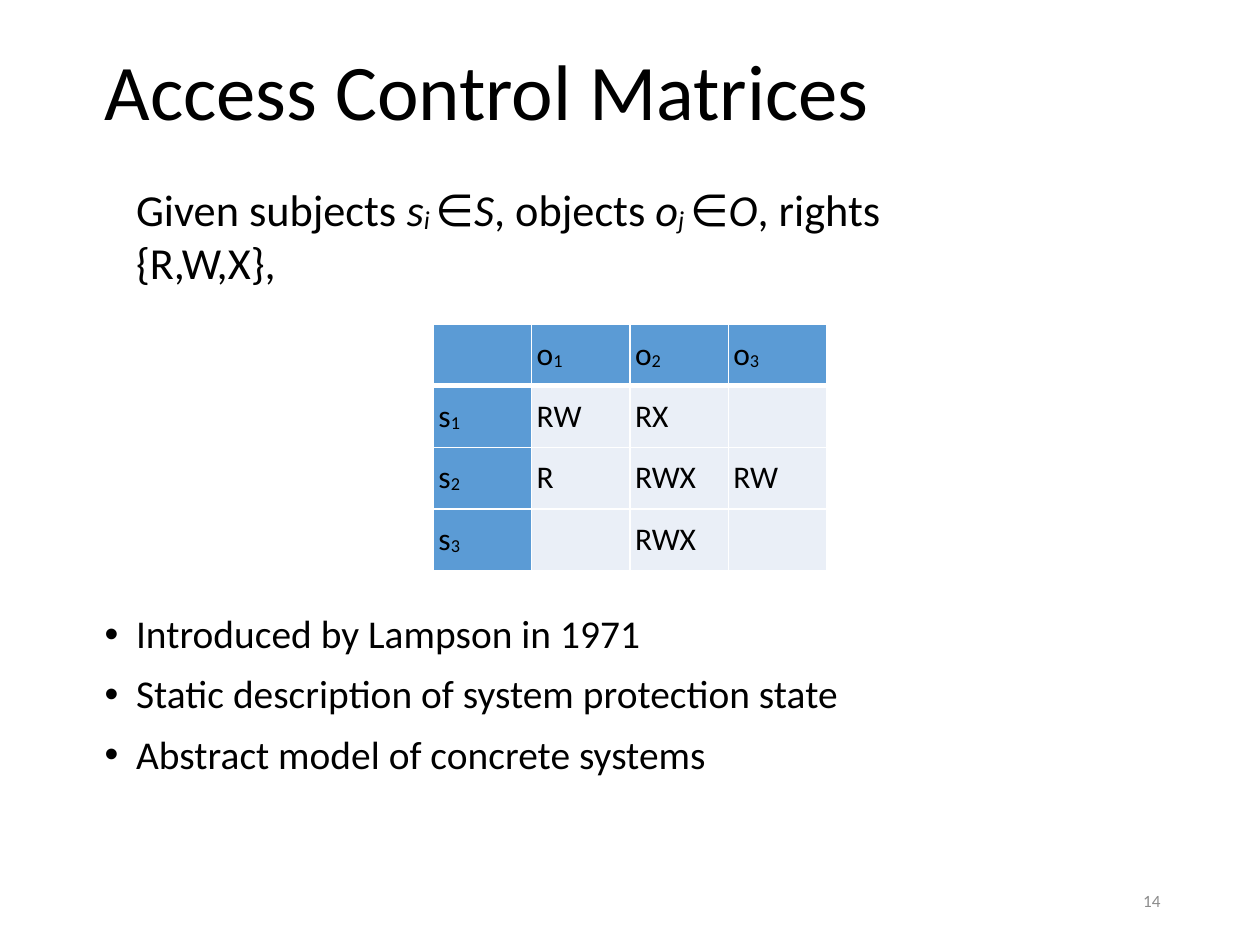
from lxml import etree
from pptx import Presentation
from pptx.dml.color import RGBColor
from pptx.enum.text import MSO_ANCHOR, MSO_AUTO_SIZE, PP_ALIGN
from pptx.oxml.ns import qn
from pptx.util import Inches, Pt

LEFT, RIGHT = PP_ALIGN.LEFT, PP_ALIGN.RIGHT
TOP, MIDDLE = MSO_ANCHOR.TOP, MSO_ANCHOR.MIDDLE
NO_FIT = MSO_AUTO_SIZE.NONE

FONT = "Calibri"
BLACK = RGBColor(0x00, 0x00, 0x00)
GREY = RGBColor(0x8C, 0x8C, 0x8C)
HEADER_BLUE = RGBColor(0x5B, 0x9B, 0xD5)
CELL_BLUE = RGBColor(0xEA, 0xEF, 0xF7)
RULE_COLOR = "FFFFFF"

WIDTH, HEIGHT = 10, 7.5
MARGIN = 0.73
CONTENT_WIDTH = WIDTH - 2 * MARGIN
COLUMN, ROW = 0.78, 0.49
INSET = Inches(0.04)

# Matrix entries; a digit after a letter is an index
MATRIX = [
    ["", "o1", "o2", "o3"],
    ["s1", "RW", "RX", ""],
    ["s2", "R", "RWX", "RW"],
    ["s3", "", "RWX", ""],
]
BULLETS = [
    "Introduced by Lampson in 1971",
    "Static description of system protection state",
    "Abstract model of concrete systems",
]
# Text, italic, subscript
DEFINITION = [
    ("Given subjects ", False, False),
    ("s", True, False),
    ("i ", True, True),
    ("∈", False, False),
    ("S", True, False),
    (", objects ", False, False),
    ("o", True, False),
    ("j ", True, True),
    ("∈O", True, False),
    (", rights {R,W,X},", False, False),
]


def place(shape, left, top, width, height):
    shape.left, shape.top = Inches(left), Inches(top)
    shape.width, shape.height = Inches(width), Inches(height)


def style_font(font, size, color=BLACK):
    font.name, font.size, font.bold = FONT, Pt(size), False
    font.color.rgb = color


def add_span(para, text, size, color=BLACK, italic=False, subscript=False):
    span = para.add_run()
    span.text = text
    style_font(span.font, size, color)
    span.font.italic = italic
    if subscript:
        span.font._element.set("baseline", "-6000")


def set_insets(item):
    item.margin_left = item.margin_right = INSET
    item.margin_top = item.margin_bottom = INSET


def add_text_box(page, left, top, width, height):
    box = page.shapes.add_textbox(0, 0, 0, 0)
    place(box, left, top, width, height)
    frame = box.text_frame
    frame.word_wrap = True
    frame.vertical_anchor = MIDDLE
    return frame


def fill_placeholder(holder, lines, size, anchor):
    frame = holder.text_frame
    frame.text = "\n".join(lines)
    frame.auto_size = NO_FIT
    frame.vertical_anchor = anchor
    for para in frame.paragraphs:
        para.alignment = LEFT
        para.line_spacing = 0.9
        style_font(para.runs[0].font, size)


def add_bullets(paragraphs):
    for para in paragraphs:
        para.space_before = Pt(10)
        properties = para._p.get_or_add_pPr()
        properties.set("marL", str(Inches(0.25)))
        properties.set("indent", str(-Inches(0.25)))
        etree.SubElement(properties, qn("a:buChar"), char="•")


def add_border(cell, side, points):
    line = etree.SubElement(cell._tc.get_or_add_tcPr(), qn("a:ln" + side), w=str(Pt(points)))
    fill = etree.SubElement(line, qn("a:solidFill"))
    etree.SubElement(fill, qn("a:srgbClr"), val=RULE_COLOR)


def fill_cell(cell, text, row, column):
    set_insets(cell)
    cell.vertical_anchor = MIDDLE
    for side in "LRTB":
        under_header = (row, side) in ((0, "B"), (1, "T"))
        add_border(cell, side, 3 if under_header else 1)
    cell.fill.solid()
    cell.fill.fore_color.rgb = CELL_BLUE if row and column else HEADER_BLUE
    para = cell.text_frame.paragraphs[0]
    for symbol in ([text] if text.isalpha() else text):
        add_span(para, symbol, 18, subscript=symbol.isdigit())


def add_matrix(page):
    rows, columns = len(MATRIX), len(MATRIX[0])
    width, height = columns * COLUMN, rows * ROW
    table = page.shapes.add_table(
        rows, columns, Inches((WIDTH - width) / 2), Inches(2.57), Inches(width), Inches(height)
    ).table
    for row, entries in enumerate(MATRIX):
        for column, text in enumerate(entries):
            fill_cell(table.cell(row, column), text, row, column)


def main():
    deck = Presentation()
    deck.slide_width, deck.slide_height = Inches(WIDTH), Inches(HEIGHT)
    page = deck.slides.add_slide(deck.slide_layouts[1])
    title, body = page.placeholders[0], page.placeholders[1]

    # Title and bullet list
    place(title, MARGIN, 0.34, CONTENT_WIDTH, 0.83)
    fill_placeholder(title, ["Access Control Matrices"], 45, MIDDLE)
    place(body, MARGIN, 4.83, CONTENT_WIDTH, 2)
    fill_placeholder(body, BULLETS, 22.5, TOP)
    add_bullets(body.text_frame.paragraphs)

    # Page number
    number = add_text_box(page, 7.06, 6.95, 2.25, 0.4).paragraphs[0]
    number.alignment = RIGHT
    add_span(number, "14", 9.8, GREY)

    # Access matrix
    add_matrix(page)

    # Definition of subjects, objects and rights
    frame = add_text_box(page, 1.04, 1.62, 7.1, 0.5)
    set_insets(frame)
    for text, italic, subscript in DEFINITION:
        add_span(frame.paragraphs[0], text, 25.3, italic=italic, subscript=subscript)

    deck.save("out.pptx")


if __name__ == "__main__":
    main()
